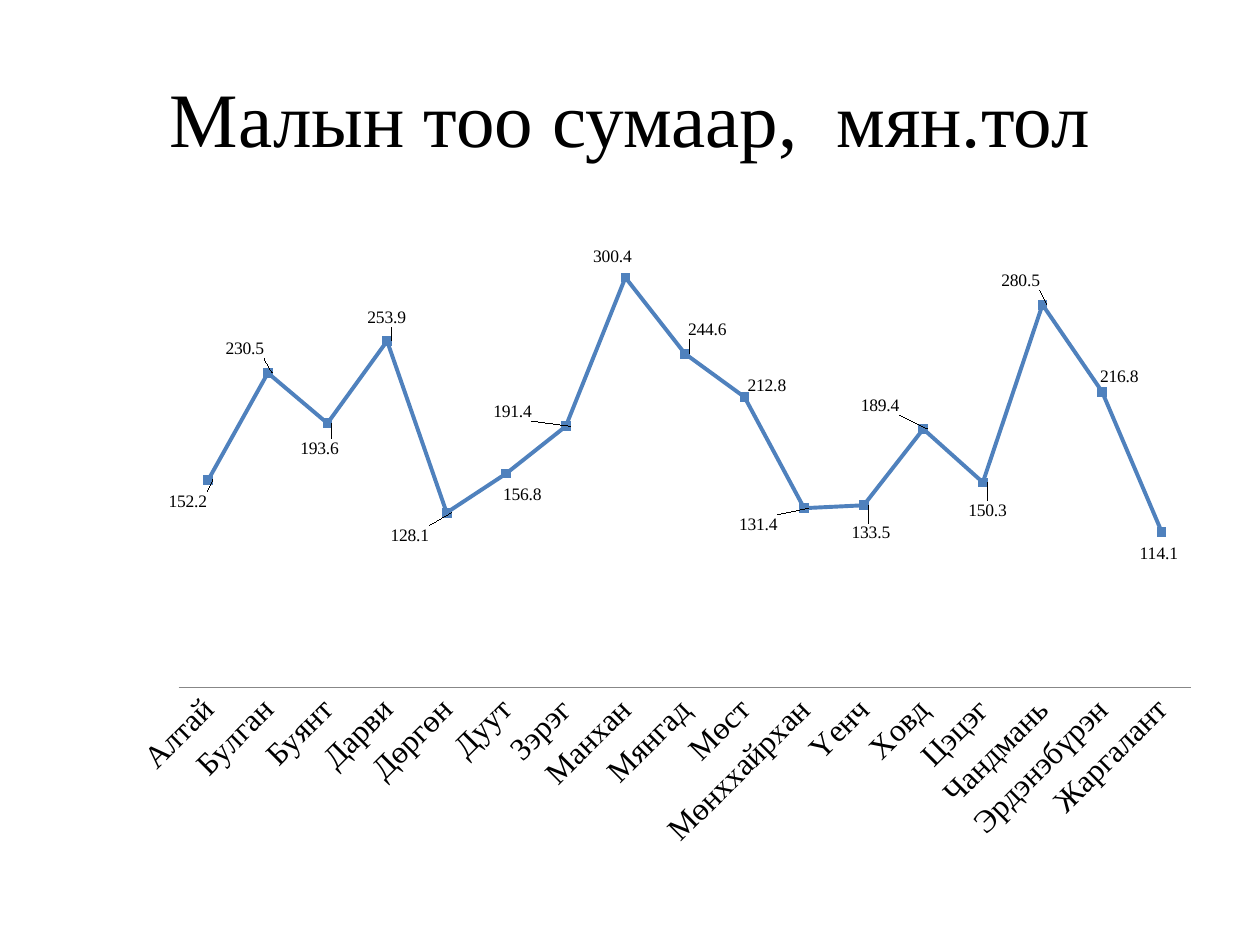
from dataclasses import dataclass

from lxml import etree
from pptx import Presentation, util as u
from pptx.chart.data import CategoryChartData
from pptx.dml.color import RGBColor
from pptx.enum import chart as c, text
from pptx.oxml import parse_xml
from pptx.oxml.ns import nsdecls


@dataclass
class Theme:
    font: str = "Times New Roman"
    ink: RGBColor = RGBColor(0, 0, 0)
    line: RGBColor = RGBColor(0x4F, 0x81, 0xBD)
    axis: RGBColor = RGBColor(0x87, 0x87, 0x87)
    title_size: int = 44
    category_size: int = 18
    label_size: int = 10


theme = Theme()


def set_font(font, size):
    font.name = theme.font
    font.size = u.Pt(size)
    font.color.rgb = theme.ink


def manual_layout(target="", **shares):
    """Return a c:layout element; shares are fractions of the chart's size."""
    values = "".join(f'<c:{key} val="{share:.4f}"/>' for key, share in shares.items())
    return parse_xml(
        f'<c:layout {nsdecls("c")}><c:manualLayout>{target}{values}</c:manualLayout></c:layout>')


# District, thousand head, label shift in inches from the right of its marker
livestock = [
    ("Алтай", 152.2, -0.39, 0.17),
    ("Булган", 230.5, -0.41, -0.19),
    ("Буянт", 193.6, -0.29, 0.20),
    ("Дарви", 253.9, -0.23, -0.19),
    ("Дөргөн", 128.1, -0.52, 0.18),
    ("Дуут", 156.8, -0.10, 0.17),
    ("Зэрэг", 191.4, -0.65, -0.12),
    ("Манхан", 300.4, -0.33, -0.17),
    ("Мянгад", 244.6, -0.05, -0.19),
    ("Мөст", 212.8, -0.05, -0.09),
    ("Мөнххайрхан", 131.4, -0.59, 0.13),
    ("Үенч", 133.5, -0.17, 0.22),
    ("Ховд", 189.4, -0.57, -0.19),
    ("Цэцэг", 150.3, -0.19, 0.22),
    ("Чандмань", 280.5, -0.40, -0.19),
    ("Эрдэнэбүрэн", 216.8, -0.09, -0.12),
    ("Жаргалант", 114.1, -0.25, 0.17),
]

presentation = Presentation()
presentation.slide_width, presentation.slide_height = u.Inches(10), u.Inches(7.5)
slide = presentation.slides.add_slide(presentation.slide_layouts[6])
width, height = presentation.slide_width, presentation.slide_height

# Title
title = slide.shapes.add_textbox(
    int(width * 0.05), int(height * 0.04), int(width * 0.9), u.Inches(1.25))
title.text_frame.word_wrap = True
title.text_frame.vertical_anchor = text.MSO_ANCHOR.MIDDLE
paragraph = title.text_frame.paragraphs[0]
paragraph.alignment = text.PP_ALIGN.CENTER
for words in ("Малын тоо сумаар,", " ", "мян.тол"):
    run = paragraph.add_run()
    run.text = words
    if words == " ":
        run.font._element.set("spc", "1100")  # widens the gap before the unit
set_font(paragraph.font, theme.title_size)

# Chart
chart_data = CategoryChartData()
chart_data.categories = [district for district, *_ in livestock]
chart_data.add_series("Series 1", [count for _, count, *_ in livestock])
chart_width, chart_height = u.Inches(8.72), u.Inches(5.28)
chart = slide.shapes.add_chart(
    c.XL_CHART_TYPE.LINE_MARKERS_STACKED, u.Inches(0.92), u.Inches(1.55),
    chart_width, chart_height, chart_data).chart
chart.has_title = False
chart.has_legend = False
set_font(chart.font, theme.label_size)

plot_area = chart._chartSpace.chart.plotArea
for layout in plot_area.findall("{*}layout"):
    plot_area.remove(layout)
plot_area.insert(0, manual_layout(
    '<c:layoutTarget val="inner"/><c:xMode val="edge"/><c:yMode val="edge"/>',
    x=0.057, y=0.022, w=0.922, h=0.718))

# Axes
value_axis = chart.value_axis
value_axis.minimum_scale, value_axis.maximum_scale = 0, 350
value_axis.has_major_gridlines = False
value_axis.visible = False
category_axis = chart.category_axis
category_axis.major_tick_mark = c.XL_TICK_MARK.NONE
category_axis.format.line.color.rgb = theme.axis
category_axis.format.line.width = u.Pt(0.75)
set_font(category_axis.tick_labels.font, theme.category_size)
category_axis._element.find("{*}txPr/{*}bodyPr").set("rot", str(-45 * 60000))

# Line, markers and labels
plot = chart.plots[0]
plot.vary_by_categories = False
series = plot.series[0]
series.smooth = False
series.format.line.color.rgb = theme.line
series.format.line.width = u.Pt(2.25)
series.marker.style = c.XL_MARKER_STYLE.SQUARE
series.marker.size = 5
series.marker.format.fill.solid()
series.marker.format.fill.fore_color.rgb = theme.line
series.marker.format.line.color.rgb = theme.line
series.data_labels.show_value = True
set_font(series.data_labels.font, theme.label_size)
for index, (_, _, shift_x, shift_y) in enumerate(livestock):
    label = series.points[index].data_label
    label.position = c.XL_LABEL_POSITION.RIGHT
    set_font(label.font, theme.label_size)
    element = series.data_labels._element.findall("{*}dLbl")[index]
    element.insert(1, manual_layout(
        x=u.Inches(shift_x) / chart_width, y=u.Inches(shift_y) / chart_height))

presentation.save("out.pptx")
